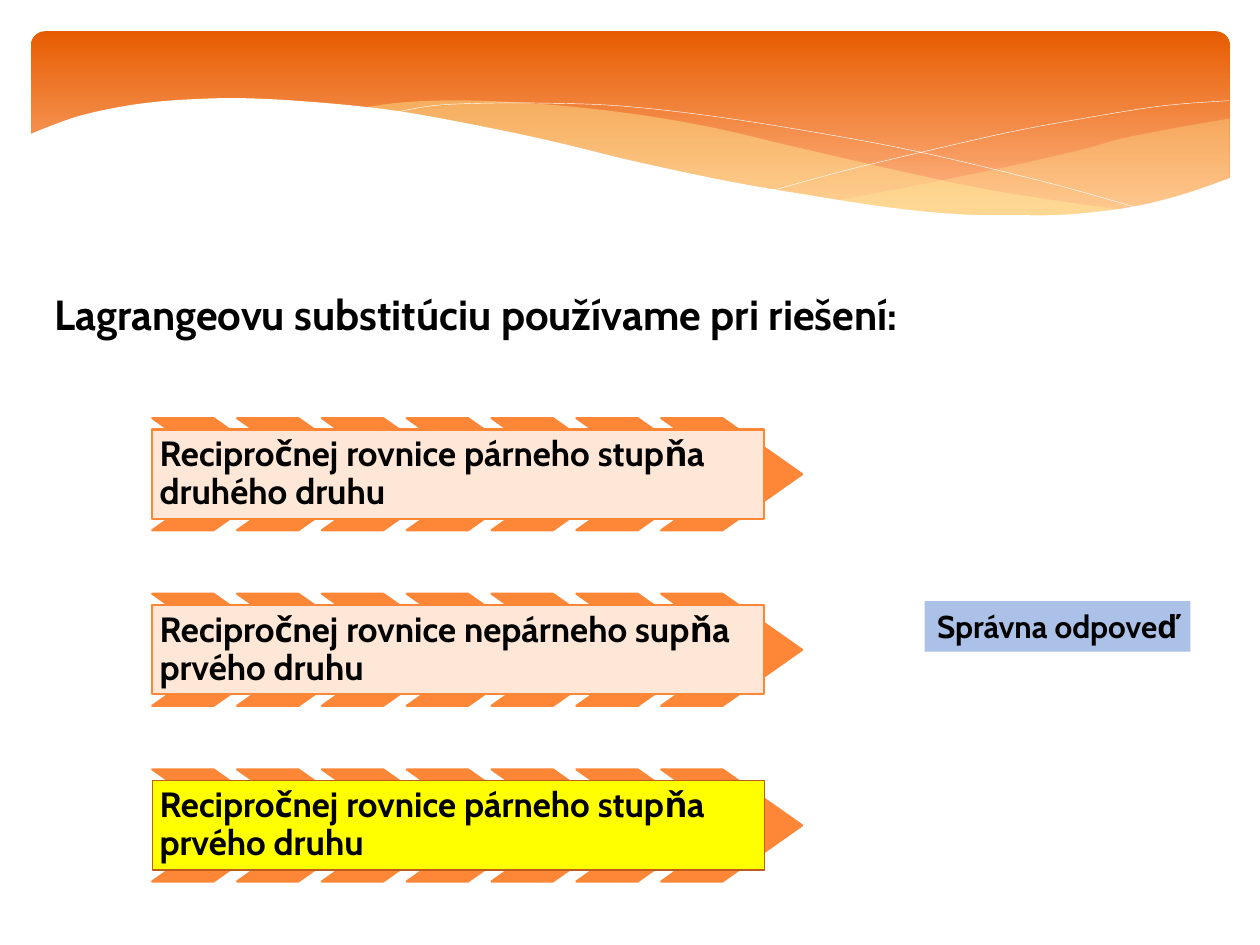
from dataclasses import dataclass
from itertools import chain

from pptx import Presentation
from pptx.dml.color import RGBColor
from pptx.enum.shapes import MSO_SHAPE
from pptx.enum.text import MSO_ANCHOR, MSO_AUTO_SIZE, PP_ALIGN
from pptx.oxml.ns import qn
from pptx.util import Cm, Pt
from lxml.etree import SubElement

FONT = "Cabin"
ORANGE = "FE8637"
PALE_YELLOW = "FFF39D"
WHITE = "FFFFFF"
CURVE_STEPS = 6
UNITS_PER_CM = 1000

Edge = list[tuple[float, float]]


@dataclass
class Wave:
    edges: list[Edge]
    fill: str | None = None
    opacity: int = 100
    line: str | None = None


@dataclass
class Answer:
    text: str
    fill: str = "FFE7D7"
    line: str = ORANGE
    line_width: float = 1.25


@dataclass
class Box:
    left: float
    top: float
    width: float
    height: float

    def lengths(self) -> list[Cm]:
        return [Cm(value) for value in (self.left, self.top, self.width, self.height)]


WAVES = [
    Wave([[(24.79, 2.39), (23.75, 2.57), (22.63, 2.79), (21.87, 3), (20.45, 3.33),
           (18.52, 3.73), (16.79, 4.06)],
          [(16.79, 4.06), (17.91, 4.19), (19.23, 4.32), (20.4, 4.37), (21.44, 4.34),
           (22.38, 4.24), (23.39, 4.06), (24.1, 3.86), (24.79, 3.58)]],
         PALE_YELLOW, 29),
    Wave([[(22.68, 4.24), (21.26, 4.04), (19.69, 3.78), (17.93, 3.4), (15.98, 2.95),
           (14.45, 2.59), (13.06, 2.34), (11.81, 2.18), (10.67, 2.08), (9.65, 2.03),
           (8.74, 2.03), (7.95, 2.08), (7.26, 2.18)],
          [(7.26, 2.18), (8.69, 2.39), (10.26, 2.69), (11.4, 2.95), (13.46, 3.43),
           (15.27, 3.81), (16.89, 4.09), (18.34, 4.27), (19.63, 4.37), (20.78, 4.39),
           (21.77, 4.34), (22.68, 4.24)]],
         PALE_YELLOW, 40),
    Wave([[(7.85, 2.29), (8.74, 2.13), (9.83, 2.08), (11, 2.08), (12.42, 2.13),
           (14.12, 2.31), (16.15, 2.62), (18.47, 3.05), (21.11, 3.68), (23.04, 4.22)]],
         line=WHITE),
    Wave([[(15.57, 3.84), (17.07, 3.43), (19, 2.97), (20.47, 2.64), (22, 2.36),
           (23.47, 2.13), (24.77, 2.03)]],
         line=WHITE),
    Wave([[(24.82, 3.58), (23.88, 3.91), (22.83, 4.17), (21.59, 4.32), (20.55, 4.34),
           (19.33, 4.32), (17.98, 4.19), (16.46, 3.96), (14.71, 3.66), (12.78, 3.25),
           (11.35, 2.9), (9.93, 2.59), (8.03, 2.24), (6.35, 2.06), (4.9, 1.98),
           (3.71, 2.01), (2.69, 2.11), (1.7, 2.31), (1.02, 2.54), (0.58, 2.72)],
          [(0.58, 5.69), (24.82, 5.69)]],
         WHITE),
]

ANSWERS = [
    Answer("Recipročnej rovnice párneho stupňa druhého druhu"),
    Answer("Recipročnej rovnice nepárneho supňa prvého druhu"),
    Answer("Recipročnej rovnice párneho stupňa prvého druhu", "FFFF00", "BE5C1C", 0.75),
]

ANSWER_LEFT = 3.07
ANSWER_TOP = 8.43
ANSWER_PITCH = 3.54
CHEVRON_COUNT = 7
CHEVRON_PITCH = 1.71


def color(value: str) -> RGBColor:
    return RGBColor.from_string(value)


def paint(shape, fill: str | None, line: str | None = None, line_width: float = 1.25) -> None:
    shape.shadow.inherit = False
    if fill:
        shape.fill.solid()
        shape.fill.fore_color.rgb = color(fill)
    else:
        shape.fill.background()
    if line:
        shape.line.color.rgb = color(line)
        shape.line.width = Pt(line_width)
    else:
        shape.line.fill.background()


def write(shape, text: str, size: float, anchor=MSO_ANCHOR.TOP) -> None:
    frame = shape.text_frame
    frame.text = text
    frame.vertical_anchor = anchor
    frame.auto_size = MSO_AUTO_SIZE.NONE
    paragraph = frame.paragraphs[0]
    paragraph.alignment = PP_ALIGN.LEFT
    font = paragraph.runs[0].font
    font.name = FONT
    font.size = Pt(size)
    font.bold = True
    font.color.rgb = color("000000")


def add_box(slide, kind: MSO_SHAPE, box: Box):
    return slide.shapes.add_shape(kind, *box.lengths())


def smooth(edge: Edge) -> Edge:
    padded = [edge[0], *edge, edge[-1]]
    points = [edge[0]]
    for before, start, end, after in zip(padded, padded[1:], padded[2:], padded[3:]):
        for step in range(1, CURVE_STEPS + 1):
            t = step / CURVE_STEPS
            points.append(tuple(
                0.5 * (2 * b + (c - a) * t + (2 * a - 5 * b + 4 * c - d) * t**2
                       + (3 * b - a - 3 * c + d) * t**3)
                for a, b, c, d in zip(before, start, end, after)))
    return points


def add_wave(slide, wave: Wave) -> None:
    points = [(x * UNITS_PER_CM, y * UNITS_PER_CM)
              for x, y in chain.from_iterable(map(smooth, wave.edges))]
    builder = slide.shapes.build_freeform(*points[0], scale=Cm(1) / UNITS_PER_CM)
    builder.add_line_segments(points[1:], close=wave.fill is not None)
    shape = builder.convert_to_shape()
    paint(shape, wave.fill, wave.line, 0.25)
    if wave.opacity < 100:
        fill_color = shape.element.spPr.find(qn("a:solidFill")).find(qn("a:srgbClr"))
        SubElement(fill_color, qn("a:alpha")).set("val", str(wave.opacity * 1000))


def add_banner(slide) -> None:
    banner = add_box(slide, MSO_SHAPE.ROUNDED_RECTANGLE, Box(0.63, 0.63, 24.16, 3.96))
    banner.adjustments[0] = 0.07
    paint(banner, WHITE)
    banner.fill.gradient()
    banner.fill.gradient_angle = 270
    for stop, position, value in zip(banner.fill.gradient_stops, (0, 0.9), ("E75C01", "FEB687")):
        stop.position = position
        stop.color.rgb = color(value)


def add_answer(slide, answer: Answer, top: float) -> None:
    for index in range(CHEVRON_COUNT):
        left = ANSWER_LEFT + index * CHEVRON_PITCH
        chevron = add_box(slide, MSO_SHAPE.CHEVRON, Box(left, top, 2.84, 2.26))
        chevron.adjustments[0] = 0.71
        paint(chevron, ORANGE, ORANGE)
    panel = add_box(slide, MSO_SHAPE.RECTANGLE, Box(ANSWER_LEFT, top + 0.23, 12.34, 1.8))
    paint(panel, answer.fill, answer.line, answer.line_width)
    write(panel, answer.text, 20, MSO_ANCHOR.MIDDLE)
    frame = panel.text_frame
    frame.margin_left = frame.margin_right = frame.margin_top = frame.margin_bottom = Cm(0.15)
    frame.paragraphs[0].line_spacing = 0.9


def main() -> None:
    presentation = Presentation()
    presentation.slide_width = Cm(25.4)
    presentation.slide_height = Cm(19.05)
    slide = presentation.slides.add_slide(presentation.slide_layouts[5])

    add_banner(slide)
    for wave in WAVES:
        add_wave(slide, wave)

    title = slide.shapes.title
    title.left, title.top, title.width, title.height = Box(0.84, 5.69, 24, 1.27).lengths()
    write(title, "Lagrangeovu substitúciu používame pri riešení:", 24)
    slide.shapes.element.append(title.element)

    for index, answer in enumerate(ANSWERS):
        add_answer(slide, answer, ANSWER_TOP + index * ANSWER_PITCH)

    label = add_box(slide, MSO_SHAPE.RECTANGLE, Box(18.64, 12.12, 5.36, 1.02))
    paint(label, "ACC1E8")
    write(label, "Správna odpoveď", 18)
    label.text_frame.word_wrap = False

    presentation.save("out.pptx")


if __name__ == "__main__":
    main()
